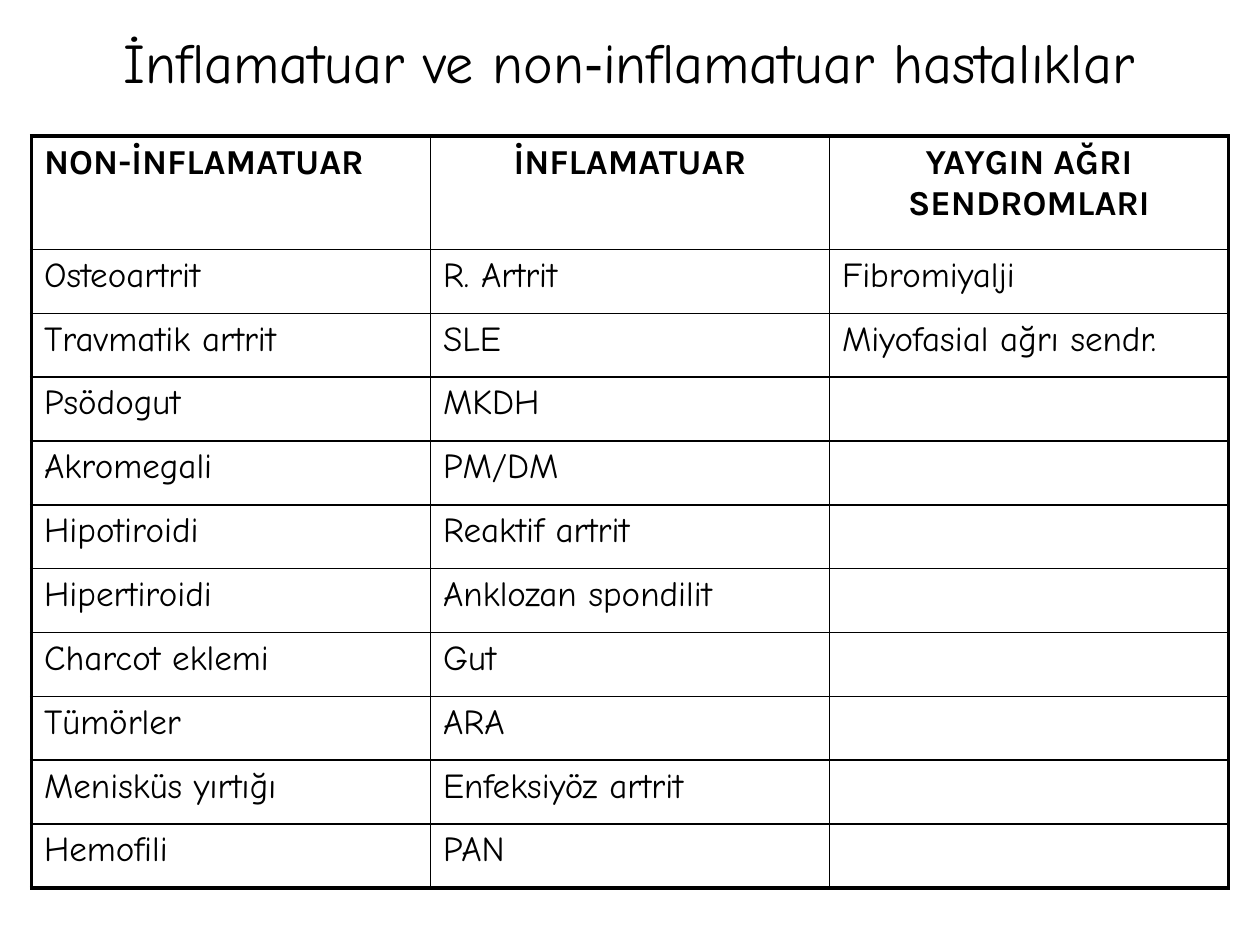
from dataclasses import dataclass
from itertools import zip_longest

from lxml.etree import SubElement
from pptx import Presentation
from pptx.dml.color import RGBColor
from pptx.enum.text import MSO_ANCHOR, PP_ALIGN
from pptx.oxml.ns import qn
from pptx.util import Inches, Pt


@dataclass(frozen=True)
class Theme:
    ink: RGBColor = RGBColor(0, 0, 0)
    paper: RGBColor = RGBColor(255, 255, 255)
    body: str = "Comic Neue"
    head: str = "Karla"
    dash: str = "Arial"
    title: Pt = Pt(32)
    text: Pt = Pt(20)
    gap: Pt = Pt(4)
    thin: Pt = Pt(1)
    thick: Pt = Pt(2.25)


THEME = Theme()

HEADS = ["NON-İNFLAMATUAR", "İNFLAMATUAR", "YAYGIN AĞRI SENDROMLARI"]
GROUPS = [
    ["Osteoartrit", "Travmatik artrit", "Psödogut", "Akromegali", "Hipotiroidi",
     "Hipertiroidi", "Charcot eklemi", "Tümörler", "Menisküs yırtığı", "Hemofili"],
    ["R. Artrit", "SLE", "MKDH", "PM/DM", "Reaktif artrit",
     "Anklozan spondilit", "Gut", "ARA", "Enfeksiyöz artrit", "PAN"],
    ["Fibromiyalji", "Miyofasial ağrı sendr."],
]


def add_title(slide, left, top, width, height):
    title = slide.shapes.title
    title.left, title.top, title.width, title.height = left, top, width, height
    title.fill.solid()
    title.fill.fore_color.rgb = THEME.paper
    title.line.color.rgb = THEME.paper
    title.line.width = Pt(0.75)
    frame = title.text_frame
    frame.word_wrap = True
    frame.vertical_anchor = MSO_ANCHOR.MIDDLE
    para = frame.paragraphs[0]
    para.alignment = PP_ALIGN.CENTER
    para.line_spacing = 0.75
    para.font.size = THEME.title
    para.font.color.rgb = THEME.ink
    for text, face in [("İnflamatuar ve non", THEME.body), ("-", THEME.dash),
                       ("inflamatuar hastalıklar", THEME.body)]:
        run = para.add_run()
        run.text = text
        run.font.name = face


def set_edges(cell, edges):
    props = cell._tc.get_or_add_tcPr()
    for side, outer in edges.items():
        width = THEME.thick if outer else THEME.thin
        line = SubElement(props, qn(f"a:ln{side}"), w=str(int(width)))
        fill = SubElement(line, qn("a:solidFill"))
        SubElement(fill, qn("a:srgbClr"), val=str(THEME.ink))


def fill_cell(cell, text, is_head, align):
    cell.fill.solid()
    cell.fill.fore_color.rgb = THEME.paper
    para = cell.text_frame.paragraphs[0]
    para.text = text
    para.alignment = align
    para.space_before = THEME.gap
    para.font.size = THEME.text
    para.font.name = THEME.head if is_head else THEME.body
    para.font.bold = is_head
    para.font.color.rgb = THEME.ink


def add_grid(slide, left, top, width, height):
    data = [HEADS, *zip_longest(*GROUPS, fillvalue="")]
    rows, cols = len(data), len(HEADS)
    table = slide.shapes.add_table(rows, cols, left, top, width, height).table
    table.first_row = table.horz_banding = False
    first = Inches(0.9)
    for r, row in enumerate(table.rows):
        row.height = first if r == 0 else (height - first) // (rows - 1)
    for r, texts in enumerate(data):
        for c, text in enumerate(texts):
            cell = table.cell(r, c)
            set_edges(cell, {"L": c == 0, "R": c == cols - 1,
                             "T": r == 0, "B": r == rows - 1})
            centred = r == 0 and c > 0
            align = PP_ALIGN.CENTER if centred else PP_ALIGN.LEFT
            fill_cell(cell, text, r == 0, align)


def main():
    deck = Presentation()
    deck.slide_width, deck.slide_height = Inches(10), Inches(7.5)
    slide = deck.slides.add_slide(deck.slide_layouts[5])
    add_title(slide, Inches(0.27), Inches(0.21), Inches(9.45), Inches(0.67))
    add_grid(slide, Inches(0.25), Inches(1.08), Inches(9.5), Inches(5.97))
    deck.save("out.pptx")


if __name__ == "__main__":
    main()
